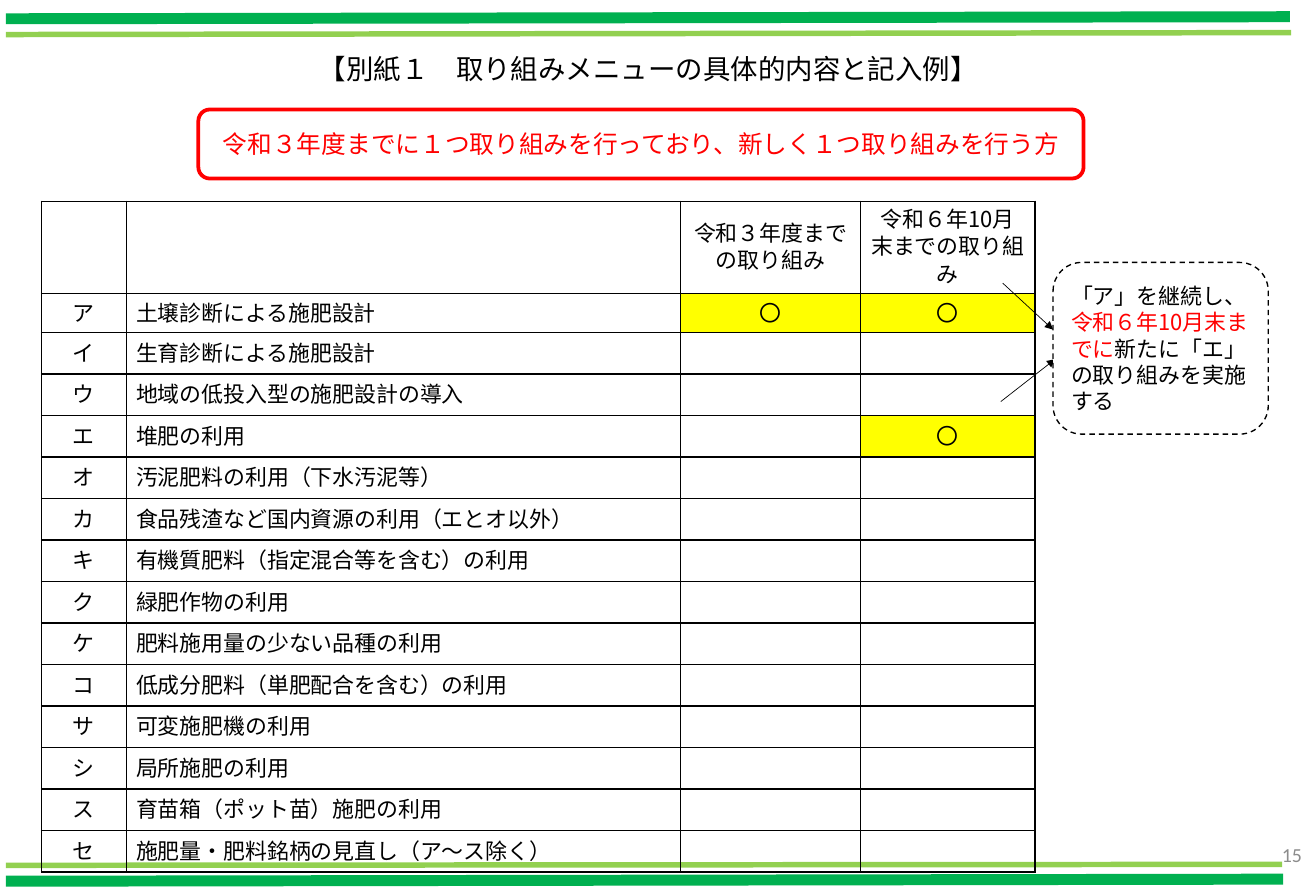
"""Build the slide with the fertiliser menu table and its filled-in example."""
from dataclasses import dataclass

from lxml import etree
from pptx import Presentation
from pptx import util as u
from pptx.dml.color import RGBColor
from pptx.enum import dml, shapes, text
from pptx.oxml import ns

Pt = u.Pt
COLORS = {"black": "000000", "white": "FFFFFF", "red": "FF0000", "grey": "8C8C8C",
          "green": "00B050", "lime": "92D050", "yellow": "FFFF00"}
JP = "Noto Sans CJK JP"
MARK = "〇"
HEADERS = ["", "", "令和３年度までの取り組み", "令和６年10月末までの取り組み"]
MENU = {
    "ア": "土壌診断による施肥設計",
    "イ": "生育診断による施肥設計",
    "ウ": "地域の低投入型の施肥設計の導入",
    "エ": "堆肥の利用",
    "オ": "汚泥肥料の利用（下水汚泥等）",
    "カ": "食品残渣など国内資源の利用（エとオ以外）",
    "キ": "有機質肥料（指定混合等を含む）の利用",
    "ク": "緑肥作物の利用",
    "ケ": "肥料施用量の少ない品種の利用",
    "コ": "低成分肥料（単肥配合を含む）の利用",
    "サ": "可変施肥機の利用",
    "シ": "局所施肥の利用",
    "ス": "育苗箱（ポット苗）施肥の利用",
    "セ": "施肥量・肥料銘柄の見直し（ア～ス除く）",
}
MARKS = {"ア": (MARK, MARK), "エ": ("", MARK)}
COLUMN_WIDTHS = [61.9, 404.6, 131, 127.4]
HEADER_HEIGHT, FIRST_HEIGHT, ROW_HEIGHT = 67.2, 28.5, 30.3


@dataclass
class Line:
    start: tuple[float, float]
    end: tuple[float, float]
    color: str
    width: float
    arrow: bool = False


@dataclass
class Piece:
    text: str
    color: str = "black"


@dataclass
class Box:
    left: float
    top: float
    width: float
    height: float
    line: str
    line_width: float
    pieces: list[Piece]
    size: float
    centred: bool = False
    dashed: bool = False


BANDS = [
    Line((4.3, 13.7), (941, 12.2), "green", 8),
    Line((4.3, 25.2), (941.8, 23.8), "lime", 4),
    Line((4.3, 643), (936, 641.5), "green", 8),
    Line((4.3, 631.4), (935.3, 630.7), "lime", 4),
]
ARROWS = [
    Line((731.5, 206.6), (768.2, 240.5), "black", 0.5, True),
    Line((730.1, 293), (769.7, 262.1), "black", 0.5, True),
]
BANNER = Box(144.7, 79.9, 645.8, 50.4, "red", 2.75,
             [Piece("令和３年度までに１つ取り組みを行っており、新しく１つ取り組みを行う方", "red")],
             18, centred=True)
CALLOUT = Box(768.2, 191.5, 157, 125.3, "black", 1,
              [Piece("「ア」を継続し、"), Piece("令和６年10月末までに", "red"),
               Piece("新たに「エ」の取り組みを実施する")], 16, dashed=True)


def rgb(name: str) -> RGBColor:
    return RGBColor.from_string(COLORS[name])


def format_run(r, size: float, color: str, font: str = JP) -> None:
    r.font.size, r.font.name = Pt(size), font
    r.font.color.rgb = rgb(color)
    etree.SubElement(r.font._element, ns.qn("a:ea"), typeface=font)


def write(p, pieces: list[Piece], size: float, align, font: str = JP) -> None:
    p.text = pieces[0].text
    for piece in pieces[1:]:
        p.add_run().text = piece.text
    p.alignment = align
    for r, piece in zip(p.runs, pieces):
        format_run(r, size, piece.color, font)


def draw_line(s, line: Line) -> None:
    sp = s.shapes.add_connector(shapes.MSO_CONNECTOR.STRAIGHT,
                                *map(Pt, line.start + line.end))
    sp.line.color.rgb, sp.line.width = rgb(line.color), Pt(line.width)
    if line.arrow:
        etree.SubElement(sp.line._get_or_add_ln(), ns.qn("a:tailEnd"), type="triangle")
    etree.SubElement(sp._element.spPr, ns.qn("a:effectLst"))


def draw_box(s, box: Box) -> None:
    sp = s.shapes.add_shape(shapes.MSO_SHAPE.ROUNDED_RECTANGLE,
                            *map(Pt, (box.left, box.top, box.width, box.height)))
    sp.shadow.inherit = False
    sp.fill.solid()
    sp.fill.fore_color.rgb = rgb("white")
    sp.line.color.rgb, sp.line.width = rgb(box.line), Pt(box.line_width)
    if box.dashed:
        sp.line.dash_style = dml.MSO_LINE.DASH
    tf = sp.text_frame
    tf.word_wrap, tf.vertical_anchor = True, text.MSO_ANCHOR.MIDDLE
    align = text.PP_ALIGN.CENTER if box.centred else text.PP_ALIGN.LEFT
    write(tf.paragraphs[0], box.pieces, box.size, align)


def format_cell(cell, content: str, spacing: float, align) -> None:
    cell.vertical_anchor = text.MSO_ANCHOR.MIDDLE
    p = cell.text_frame.paragraphs[0]
    write(p, [Piece(content)], 16, align)
    p.line_spacing = Pt(spacing)
    if content == MARK:
        cell.fill.solid()
        cell.fill.fore_color.rgb = rgb("yellow")
    else:
        cell.fill.background()
    tc_pr = cell._tc.get_or_add_tcPr()
    for i, side in enumerate("LRTB"):
        ln = etree.Element(ns.qn(f"a:ln{side}"), w=str(Pt(1)))
        fill = etree.SubElement(ln, ns.qn("a:solidFill"))
        etree.SubElement(fill, ns.qn("a:srgbClr"), val=COLORS["black"])
        tc_pr.insert(i, ln)


def draw_table(s) -> None:
    rows = [HEADERS] + [[key, name, *MARKS.get(key, ("", ""))] for key, name in MENU.items()]
    heights = [HEADER_HEIGHT, FIRST_HEIGHT] + [ROW_HEIGHT] * (len(rows) - 2)
    table = s.shapes.add_table(len(rows), len(HEADERS), Pt(30.2), Pt(146.9),
                               Pt(sum(COLUMN_WIDTHS)), Pt(sum(heights))).table
    table.first_row = table.horz_banding = False
    for column, width in zip(table.columns, COLUMN_WIDTHS):
        column.width = Pt(width)
    for i, (row, height) in enumerate(zip(rows, heights)):
        table.rows[i].height = Pt(height)
        for j, content in enumerate(row):
            align = text.PP_ALIGN.LEFT if j == 1 else text.PP_ALIGN.CENTER
            format_cell(table.cell(i, j), content, 21 if i else 20, align)


def draw_title(s) -> None:
    sp = s.shapes.title
    sp.left, sp.top, sp.width, sp.height = map(Pt, (205.2, 29.5, 535.7, 40.3))
    tf = sp.text_frame
    tf.word_wrap, tf.auto_size = True, text.MSO_AUTO_SIZE.NONE
    tf.vertical_anchor = text.MSO_ANCHOR.MIDDLE
    write(tf.paragraphs[0], [Piece("【別紙１　取り組みメニューの具体的内容と記入例】")],
          20, text.PP_ALIGN.CENTER)


def draw_page_number(s) -> None:
    tf = s.shapes.add_textbox(*map(Pt, (740.9, 609.1, 216, 28.8))).text_frame
    tf.word_wrap, tf.vertical_anchor = True, text.MSO_ANCHOR.MIDDLE
    write(tf.paragraphs[0], [Piece("15", "grey")], 14.5, text.PP_ALIGN.RIGHT, "Calibri")


def main() -> None:
    prs = Presentation()
    prs.slide_width, prs.slide_height = Pt(960), Pt(652.3)
    s = prs.slides.add_slide(prs.slide_layouts[5])
    draw_page_number(s)
    for band in BANDS:
        draw_line(s, band)
    draw_title(s)
    draw_box(s, BANNER)
    draw_table(s)
    for arrow in ARROWS:
        draw_line(s, arrow)
    draw_box(s, CALLOUT)
    prs.save("out.pptx")


if __name__ == "__main__":
    main()
